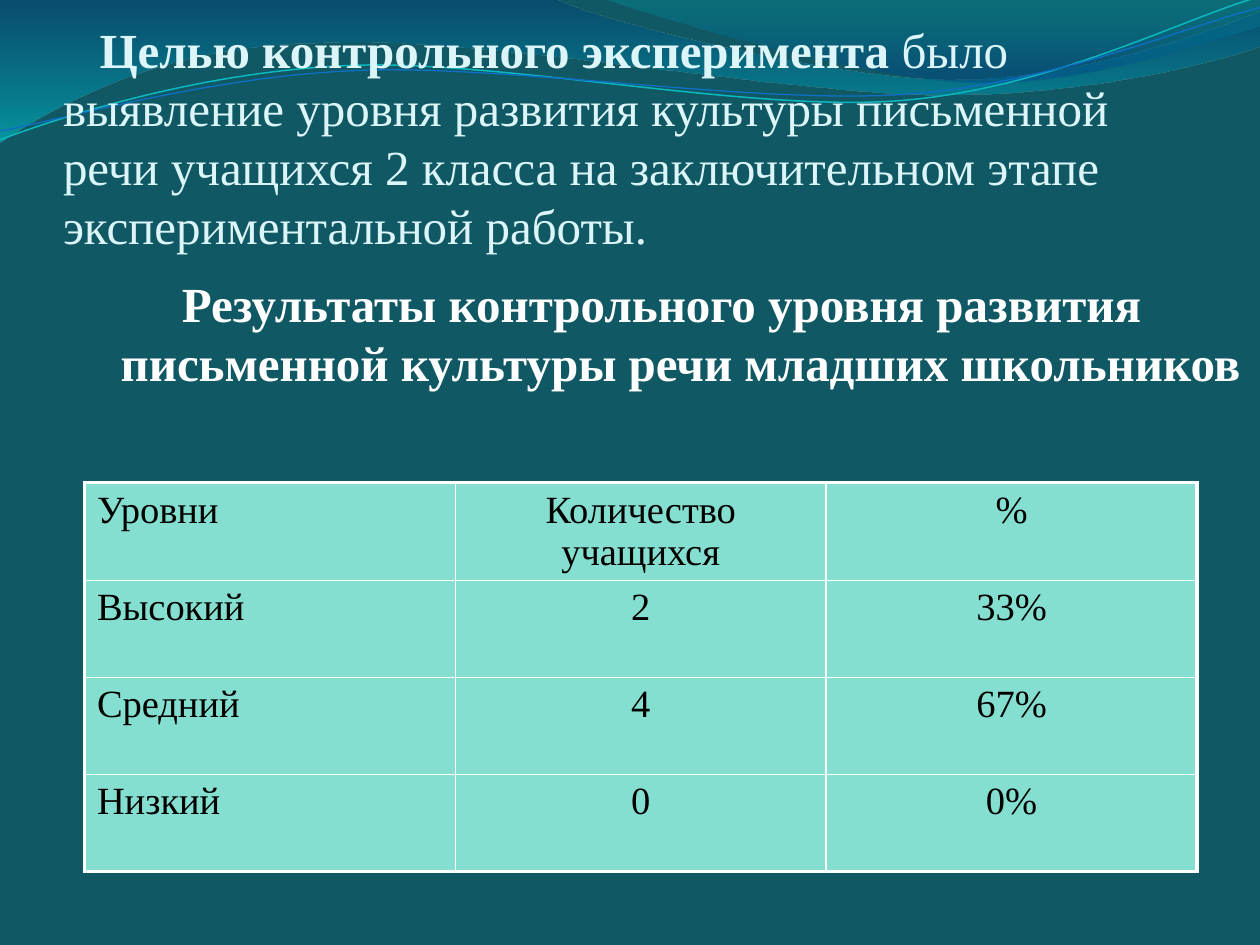
from dataclasses import dataclass
from math import cos, radians, sin

from lxml.etree import SubElement
from pptx import Presentation
from pptx.dml.color import RGBColor as Rgb
from pptx.enum.text import MSO_ANCHOR as Anchor, MSO_AUTO_SIZE as AutoSize, PP_ALIGN as Align
from pptx.oxml.ns import qn
from pptx.util import Inches, Pt


@dataclass(frozen=True)
class Theme:
    """Colours, font and type sizes of the slide."""
    font: str = "Times New Roman"
    background: str = "105964"
    title: str = "DBF5F9"
    body: str = "FFFFFF"
    cell_text: str = "000000"
    cell_fill: str = "85DFD0"
    border: str = "FFFFFF"
    heading_size: int = 28
    cell_size: int = 22
    outer_border: float = 2.25
    inner_border: float = 1
    left_wave: tuple = ((0, "003E76", 45), (1, "00C6CF", 55))
    right_wave: tuple = ((0, "00A1A9", 30), (0.8, "004A8C", 45))
    upper_line: tuple = ("0AB8BF", 0.85)
    lower_line: tuple = ("0F6FC6", 0.75)


THEME = Theme()
LINE_TILT = -2.7

LEFT_WAVE = [(0.01, 0), (4.41, 0),
             (4.77, 0.18, 6.65, 0.64, 7.59, 0.64), (8.54, 0.64, 9.59, 0.27, 10.01, 0.1),
             (10.02, 0.37),
             (9.84, 0.45, 8.71, 0.77, 7.47, 0.76), (6.23, 0.76, 3.83, 0.29, 2.58, 0.35),
             (1.3, 0.36, 0.47, 0.84, 0, 1.14)]
RIGHT_WAVE = [(0, 0), (0.3, 0.12, 2.03, 0.63, 2.9, 0.66), (3.77, 0.7, 4.82, 0.33, 5.21, 0.22),
              (5.21, 0.01)]
UPPER_LINE = [(0.01, 1.12), (0.49, 0.94, 1.59, 0.58, 2.78, 0.53),
              (3.96, 0.48, 5.94, 0.9, 7.14, 0.81), (8.34, 0.72, 9.39, 0.16, 9.99, -0.01)]
LOWER_LINE = [(0.01, 1.05), (0.48, 0.97, 1.65, 0.62, 2.84, 0.57),
              (4.04, 0.52, 5.98, 0.84, 7.18, 0.76), (8.37, 0.68, 9.42, 0.22, 10.01, 0.07)]

LEVELS = [("Уровни", "Количество учащихся", "%"),
          ("Высокий", "2", "33%"),
          ("Средний", "4", "67%"),
          ("Низкий", "0", "0%")]


def add_text(paragraph, text, *, size, color, bold=False, align=Align.LEFT):
    """Append a formatted run to a paragraph."""
    paragraph.alignment = align
    run = paragraph.add_run()
    run.text = text
    run.font.name = THEME.font
    run.font.size = Pt(size)
    run.font.bold = bold
    run.font.color.rgb = Rgb.from_string(color)


def place(slide, placeholder, box):
    """Move a placeholder into a box, in front, and return its text frame."""
    placeholder.left, placeholder.top, placeholder.width, placeholder.height = map(Inches, box)
    slide.shapes._spTree.append(placeholder._element)
    frame = placeholder.text_frame
    frame.word_wrap = True
    frame.auto_size = AutoSize.NONE
    return frame


def set_indent(paragraph, margin, first_line):
    """Set the left margin and first-line indent of an unbulleted paragraph."""
    properties = paragraph._p.get_or_add_pPr()
    properties.set("marL", str(Inches(margin)))
    properties.set("indent", str(Inches(first_line)))
    SubElement(properties, qn("a:buNone"))


def turn(point, center, degrees):
    """Turn a point clockwise about a centre."""
    angle = radians(degrees)
    x, y = point[0] - center[0], point[1] - center[1]
    return (center[0] + x * cos(angle) - y * sin(angle),
            center[1] + x * sin(angle) + y * cos(angle))


def add_curve(slide, origin, steps, closed=False, tilt=0):
    """Draw an outline of straight and cubic steps, tilted about its centre."""
    points = [(origin[0] + step[i], origin[1] + step[i + 1])
              for step in steps for i in range(0, len(step), 2)]
    center = [(min(values) + max(values)) / 2 for values in zip(*points)]
    start, *rest = [tuple(map(Inches, turn(point, center, -tilt))) for point in points]
    builder = slide.shapes.build_freeform(*start, scale=1.0)
    builder.add_line_segments(rest, close=closed)
    curve = builder.convert_to_shape()
    curve.shadow.inherit = False
    curve.rotation = tilt
    segments = iter(list(curve._element.iter(qn("a:lnTo"))))
    for step in steps[1:]:
        first, *others = [next(segments) for _ in range(len(step) // 2)]
        if others:
            first.tag = qn("a:cubicBezTo")
        for segment in others:
            first.append(segment[0])
            segment.getparent().remove(segment)
    return curve


def add_wave(slide, origin, steps, stops):
    """Draw a translucent wave with a downward gradient."""
    wave = add_curve(slide, origin, steps, closed=True)
    wave.line.fill.background()
    wave.fill.gradient()
    wave.fill.gradient_angle = 270
    for stop, (position, color, _) in zip(wave.fill.gradient_stops, stops):
        stop.position = position
        stop.color.rgb = Rgb.from_string(color)
    colors = wave._element.spPr.find(qn("a:gradFill")).iter(qn("a:srgbClr"))
    for element, (_, _, opacity) in zip(colors, stops):
        SubElement(element, qn("a:alpha"), val=str(opacity * 1000))


def add_wavy_line(slide, origin, steps, stroke):
    """Draw an open curve in the given colour and width."""
    curve = add_curve(slide, origin, steps, tilt=LINE_TILT)
    curve.fill.background()
    curve.line.color.rgb = Rgb.from_string(stroke[0])
    curve.line.width = Pt(stroke[1])


def add_header_waves(slide, box):
    """Draw the decoration across the top of the slide."""
    left, top, width, _ = box
    add_wave(slide, (left, top), LEFT_WAVE, THEME.left_wave)
    add_wave(slide, (left + width - 5.22, top), RIGHT_WAVE, THEME.right_wave)
    add_wavy_line(slide, (left, top), UPPER_LINE, THEME.upper_line)
    add_wavy_line(slide, (left, top), LOWER_LINE, THEME.lower_line)


def fill_goal(slide, box):
    """Write the goal of the experiment in the title."""
    frame = place(slide, slide.shapes.title, box)
    frame.vertical_anchor = Anchor.BOTTOM
    frame.margin_left = frame.margin_right = frame.margin_bottom = 0
    frame.margin_top = Inches(0.05)
    goal = frame.paragraphs[0]
    set_indent(goal, 0, 0.29)
    style = dict(size=THEME.heading_size, color=THEME.title)
    add_text(goal, "Целью контрольного эксперимента", bold=True, **style)
    add_text(goal, " было выявление уровня развития культуры письменной речи учащихся "
                   "2 класса на заключительном этапе экспериментальной работы.", **style)


def fill_results_heading(slide, box):
    """Write the heading of the results in the body."""
    frame = place(slide, slide.placeholders[1], box)
    heading = frame.paragraphs[0]
    set_indent(heading, 0.3, -0.3)
    add_text(heading, "Результаты контрольного уровня развития письменной культуры речи "
                      "младших школьников",
             size=THEME.heading_size, color=THEME.body, bold=True, align=Align.CENTER)


def format_cell(cell, outer_sides):
    """Fill a cell and border it, heavier on its outer sides."""
    properties = cell._tc.get_or_add_tcPr()
    for side in ("L", "R", "T", "B"):
        width = THEME.outer_border if side in outer_sides else THEME.inner_border
        border = SubElement(properties, qn(f"a:ln{side}"), w=str(Pt(width)))
        SubElement(SubElement(border, qn("a:solidFill")), qn("a:srgbClr"), val=THEME.border)
    cell.fill.solid()
    cell.fill.fore_color.rgb = Rgb.from_string(THEME.cell_fill)


def add_levels_table(slide, box):
    """Add the table of pupils by level."""
    last_row, last_column = len(LEVELS) - 1, len(LEVELS[0]) - 1
    table = slide.shapes.add_table(last_row + 1, last_column + 1, *map(Inches, box)).table
    table.first_row = table.horz_banding = False
    for r, values in enumerate(LEVELS):
        for c, value in enumerate(values):
            edges = {"L": c == 0, "R": c == last_column, "T": r == 0, "B": r == last_row}
            cell = table.cell(r, c)
            format_cell(cell, [side for side, outer in edges.items() if outer])
            add_text(cell.text_frame.paragraphs[0], value, size=THEME.cell_size,
                     color=THEME.cell_text, align=Align.CENTER if c else Align.LEFT)


def main():
    """Build and save the slide."""
    deck = Presentation()
    deck.slide_width, deck.slide_height = Inches(10), Inches(7.5)
    slide = deck.slides.add_slide(deck.slide_layouts[1])
    slide.background.fill.solid()
    slide.background.fill.fore_color.rgb = Rgb.from_string(THEME.background)
    add_header_waves(slide, (-0.01, -0.01, 10.02, 1.14))
    fill_goal(slide, (0.5, 0.77, 9, 1.25))
    fill_results_heading(slide, (0.5, 2.12, 9.5, 4.8))
    add_levels_table(slide, (0.67, 3.83, 8.83, 3.08))
    deck.save("out.pptx")


if __name__ == "__main__":
    main()
